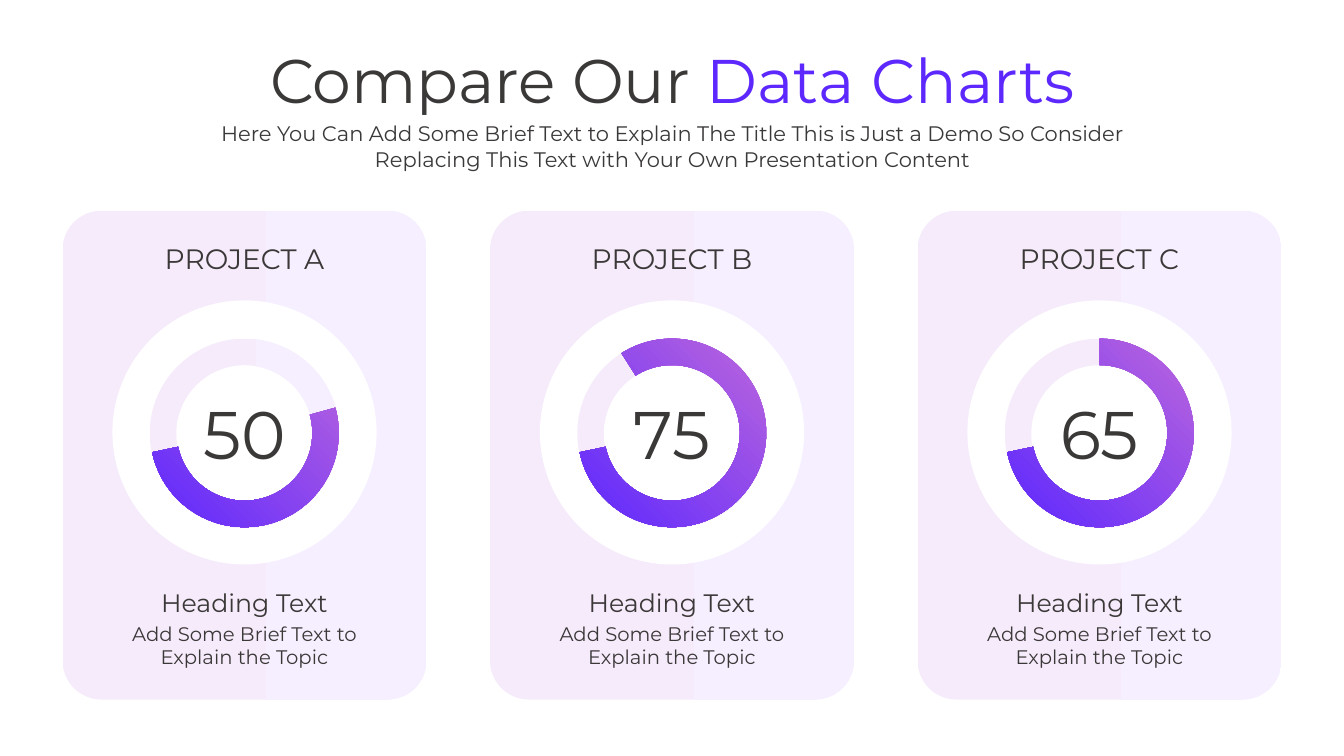
"""Builds a slide comparing three projects with ring gauges on rounded cards."""
from dataclasses import dataclass
from typing import Optional

from lxml.etree import SubElement
from pptx import Presentation
from pptx.dml.color import RGBColor as RGB
from pptx.enum.shapes import MSO_SHAPE as SHAPE
from pptx.enum.text import MSO_ANCHOR as ANCHOR, MSO_AUTO_SIZE as AUTO, PP_ALIGN as ALIGN
from pptx.oxml.ns import qn
from pptx.util import Inches, Pt


@dataclass(frozen=True)
class Gradient:
    start: str
    end: str
    start_at: float = 0
    focus: Optional[tuple[str, str]] = None


@dataclass(frozen=True)
class Theme:
    font: str = "Montserrat"
    ink: str = "3B3838"
    white: str = "FFFFFF"
    pale: Gradient = Gradient("F6EBFB", "F6EFFF", start_at=0.12)
    vivid: Gradient = Gradient("5D28FE", "BB66DD", focus=("t", "r"))
    accent: Gradient = Gradient("5D28FE", "BB66DD", focus=("l", "t"))
    title: int = 44
    subtitle: int = 15
    value: int = 48
    project: int = 20
    heading: int = 18
    body: int = 14


@dataclass(frozen=True)
class Project:
    name: str
    value: str
    arc_start: float


THEME = Theme()
PROJECTS = [
    Project("PROJECT A", "50", 344.48),
    Project("PROJECT B", "75", 237.66),
    Project("PROJECT C", "65", 270.06),
]
ARC_END = 168.13
DEGREE = 0.6
BAND = 0.14
SLIDE_W, SLIDE_H = 13.33, 7.5
CARD_W, CARD_H, CARD_TOP = 3.61, 4.85, 2.09
MARGIN = 0.62
PITCH = (SLIDE_W - 2 * MARGIN - CARD_W) / (len(PROJECTS) - 1)


def apply_gradient(fill, parent, gradient: Gradient) -> None:
    fill.gradient()
    fill.gradient_angle = 0
    first, last = fill.gradient_stops
    first.position, last.position = gradient.start_at, 1
    first.color.rgb = RGB.from_string(gradient.start)
    last.color.rgb = RGB.from_string(gradient.end)
    if gradient.focus:
        grad = parent.find(qn("a:gradFill"))
        lin = grad.find(qn("a:lin"))
        path = SubElement(grad, qn("a:path"), path="circle")
        SubElement(path, qn("a:fillToRect"), {side: "100000" for side in gradient.focus})
        grad.replace(lin, path)


def add_centred(shapes, kind: SHAPE, cx: float, top: float, w: float, h: float,
                fill: "str | Gradient", adjustments: tuple[float, ...] = ()):
    sp = shapes.add_shape(kind, Inches(cx - w / 2), Inches(top), Inches(w), Inches(h))
    sp.shadow.inherit = False
    sp.line.fill.background()
    for i, value in enumerate(adjustments):
        sp.adjustments[i] = value
    if isinstance(fill, Gradient):
        apply_gradient(sp.fill, sp.element.spPr, fill)
    else:
        sp.fill.solid()
        sp.fill.fore_color.rgb = RGB.from_string(fill)
    return sp


def write(sp, text: str, *, size: int, accent: str = "") -> None:
    tf = sp.text_frame
    tf.word_wrap = True
    tf.auto_size = AUTO.SHAPE_TO_FIT_TEXT
    tf.vertical_anchor = ANCHOR.TOP
    p = tf.paragraphs[0]
    p.alignment = ALIGN.CENTER
    p.space_before = Pt(0)
    for part in filter(None, (text, accent)):
        r = p.add_run()
        r.text = part
        r.font.name = THEME.font
        r.font.size = Pt(size)
        if part == accent:
            apply_gradient(r.font.fill, r.font.fill and r._r.get_or_add_rPr(), THEME.accent)
        else:
            r.font.color.rgb = RGB.from_string(THEME.ink)


def place(sp, left: float, top: float, w: float, h: float) -> None:
    sp.left, sp.top, sp.width, sp.height = map(Inches, (left, top, w, h))


def add_label(shapes, text: str, cx: float, top: float, w: float, h: float, size: int) -> None:
    sp = shapes.add_textbox(Inches(cx - w / 2), Inches(top), Inches(w), Inches(h))
    write(sp, text, size=size)


def add_card(shapes, project: Project, cx: float) -> None:
    add_centred(shapes, SHAPE.ROUNDED_RECTANGLE, cx, CARD_TOP, CARD_W, CARD_H,
                THEME.pale, (0.107,))
    add_centred(shapes, SHAPE.OVAL, cx, 2.98, 2.62, 2.62, THEME.white)
    gauge = shapes.add_group_shape().shapes
    add_centred(gauge, SHAPE.DONUT, cx, 3.36, 1.88, 1.88, THEME.pale, (BAND,))
    add_centred(gauge, SHAPE.BLOCK_ARC, cx, 3.36, 1.87, 1.87, THEME.vivid,
                (project.arc_start * DEGREE, ARC_END * DEGREE, BAND))
    add_label(shapes, project.value, cx, 3.84, 1.09, 0.91, THEME.value)
    add_label(shapes, project.name, cx, 2.35, 2.01, 0.44, THEME.project)
    add_label(shapes, "Heading Text", cx, 5.78, 2.33, 0.4, THEME.heading)
    add_label(shapes, "Add Some Brief Text to Explain the Topic",
              cx, 6.12, 2.71, 0.57, THEME.body)


def main() -> None:
    prs = Presentation()
    prs.slide_width, prs.slide_height = Inches(SLIDE_W), Inches(SLIDE_H)
    slide = prs.slides.add_slide(prs.slide_layouts[0])
    title, subtitle = slide.placeholders
    place(title, 1.61, 0.37, 10.12, 0.84)
    write(title, "Compare Our ", size=THEME.title, accent="Data Charts")
    place(subtitle, 1.61, 1.15, 10.12, 0.61)
    write(subtitle, "Here You Can Add Some Brief Text to Explain The Title This is Just a Demo "
          "So Consider Replacing This Text with Your Own Presentation Content",
          size=THEME.subtitle)
    for i, project in enumerate(PROJECTS):
        add_card(slide.shapes, project, MARGIN + CARD_W / 2 + i * PITCH)
    prs.save("out.pptx")


if __name__ == "__main__":
    main()
